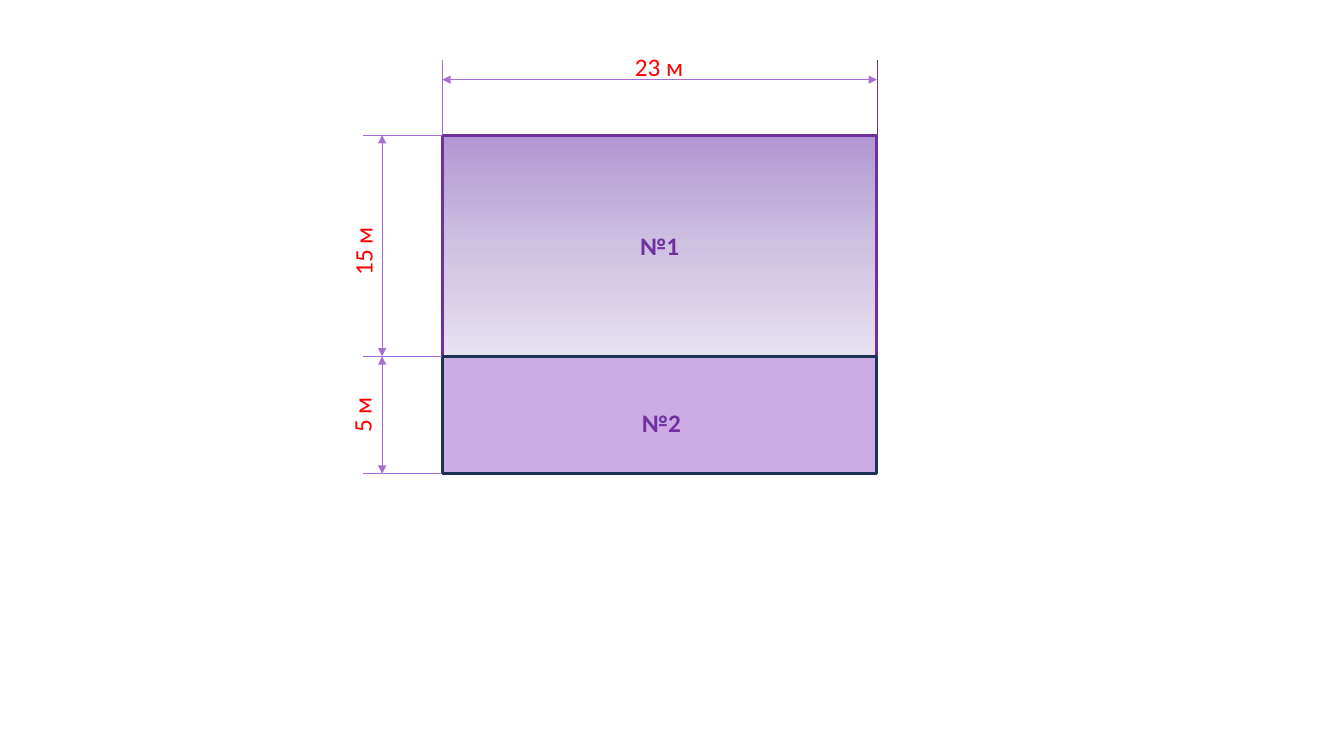
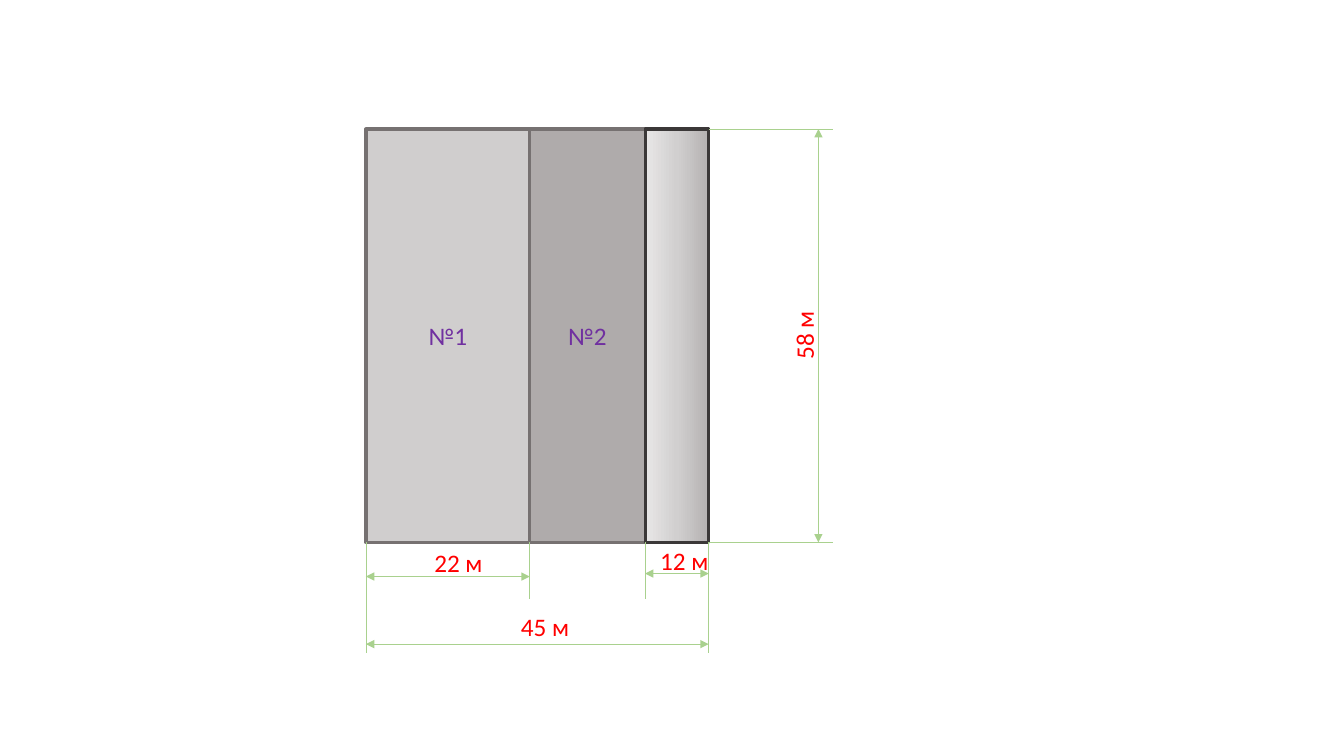
from copy import deepcopy

from lxml.etree import SubElement
from pptx import Presentation
from pptx.dml.color import RGBColor
from pptx.enum.shapes import MSO_CONNECTOR, MSO_SHAPE
from pptx.enum.text import MSO_ANCHOR, MSO_AUTO_SIZE, PP_ALIGN
from pptx.oxml.ns import qn
from pptx.util import Pt

INK = {
    "red": "FF0000",
    "plum": "7030A0",
    "lilac": "A86ED4",
    "navy": "1E3256",
    "green": "A9D18E",
    "pale": "D0CECE",
    "mid": "AFABAB",
    "edge": "767171",
    "dark": "3B3838",
    "violet1": "B197D2",
    "violet2": "CEC1E2",
    "violet3": "E7E1F0",
    "grey1": "B5B2B2",
    "grey2": "D1CFCF",
    "grey3": "E8E7E7",
}
FONT = {"name": "Calibri", "size": Pt(18)}
FRAME = {"auto_size": MSO_AUTO_SIZE.SHAPE_TO_FIT_TEXT}
THIN, THICK = 0.5, 2.25


def apply(obj, look):
    for key, val in look.items():
        setattr(obj, key, val)


def tint(name):
    return RGBColor.from_string(INK[name])


class Plan:
    def __init__(self):
        self.deck = Presentation()
        apply(self.deck, {"slide_width": Pt(960), "slide_height": Pt(540)})

    def page(self, ink):
        self.slide = self.deck.slides.add_slide(self.deck.slide_layouts[6])
        self.ink = ink

    def label(self, frame, text, ink, bold=False):
        run = frame.paragraphs[0].add_run()
        run.text = text
        apply(run.font, {**FONT, "bold": bold})
        run.font.color.rgb = tint(ink)

    def plot(self, left, top, right, base, edge, text="", bold=False):
        rect = self.slide.shapes.add_shape(
            MSO_SHAPE.RECTANGLE, Pt(left), Pt(top), Pt(right - left), Pt(base - top))
        rect.shadow.inherit = False
        rect.line.color.rgb = tint(edge)
        rect.line.width = Pt(THICK)
        if text:
            rect.text_frame.vertical_anchor = MSO_ANCHOR.MIDDLE
            rect.text_frame.paragraphs[0].alignment = PP_ALIGN.CENTER
            self.label(rect.text_frame, text, "plum", bold)
        return rect

    def paint(self, rect, ink, alpha=None):
        rect.fill.solid()
        rect.fill.fore_color.rgb = tint(ink)
        if alpha:
            hue = rect._element.spPr.find(qn("a:solidFill"))[0]
            SubElement(hue, qn("a:alpha"), val=str(alpha * 1000))

    def blend(self, rect, inks, angle):
        rect.fill.gradient()
        rect.fill.gradient_angle = angle
        stops = rect._element.spPr.find(qn("a:gradFill")).find(qn("a:gsLst"))
        stops.append(deepcopy(stops[0]))
        for at, (stop, ink) in enumerate(zip(rect.fill.gradient_stops, inks)):
            stop.color.rgb = tint(ink)
            stop.position = at / 2

    def line(self, x1, y1, x2, y2, ink=None, ends=()):
        link = self.slide.shapes.add_connector(
            MSO_CONNECTOR.STRAIGHT, Pt(x1), Pt(y1), Pt(x2), Pt(y2))
        link.line.color.rgb = tint(ink or self.ink)
        link.line.width = Pt(THIN)
        props = link._element.spPr
        for end in ends:
            SubElement(props.find(qn("a:ln")), qn(end), type="triangle")
        SubElement(props, qn("a:effectLst"))

    def span(self, *ends):
        self.line(*ends, ends=("a:headEnd", "a:tailEnd"))

    def note(self, text, left, top, width=49.7, turn=0, wrap=False, ink="red", bold=False):
        box = self.slide.shapes.add_textbox(Pt(left), Pt(top), Pt(width), Pt(29))
        box.rotation = turn
        apply(box.text_frame, {**FRAME, "word_wrap": wrap})
        self.label(box.text_frame, text, ink, bold)


def rows(plan):
    plan.page("lilac")
    left, right = 316, 626.4
    top, split, base = 96.5, 254.6, 338.4
    upper = plan.plot(left, top, right, split, "plum", "№1", True)
    plan.blend(upper, ("violet1", "violet2", "violet3"), 270)
    lower = plan.plot(left, split, right, base, "navy")
    plan.paint(lower, "lilac", 57)
    for x, ink in ((left, "lilac"), (right, "plum")):
        plan.line(x, 43.2, x, top, ink)
    for y in (top, split, base):
        plan.line(259.2, y, left, y)
    plan.span(left, 56.9, right, 56.9)
    for y1, y2 in ((top, split), (split, base)):
        plan.span(273, y1, 273, y2)
    plan.note("23 м", 446.4, 33.1)
    plan.note("15 м", 231.1, 161.3, 56.2, 270, True)
    plan.note("5 м", 238.3, 281.5, 40.3, 270)
    plan.note("№2", 451.4, 287.3, 56.9, wrap=True, ink="plum", bold=True)


def strips(plan):
    plan.page("green")
    top, base = 92.2, 387.4
    left, first, second, right = 261.4, 378.4, 460.8, 506.2
    for x1, x2, ink, text in ((left, first, "pale", "№1"), (first, second, "mid", "№2")):
        plan.paint(plan.plot(x1, top, x2, base, "edge", text), ink)
    last = plan.plot(second, top, right, base, "dark")
    plan.blend(last, ("grey1", "grey2", "grey3"), 180)
    for x, y in ((left, 466.6), (right, 466.6), (first, 427.7), (second, 427.7)):
        plan.line(x, base, x, y)
    for x1, x2, y in ((second, right, 409.7), (left, first, 411.8), (left, right, 460.1)):
        plan.span(x1, y, x2, y)
    for y in (base, top):
        plan.line(right, y, 594.7, y)
    plan.span(584.6, base, 584.6, top)
    plan.note("22 м", 303.1, 387.4)
    plan.note("12 м", 464.4, 385.9)
    plan.note("45 м", 365, 433.4)
    plan.note("58 м", 549.4, 224.6, turn=270)


def main():
    plan = Plan()
    rows(plan)
    strips(plan)
    plan.deck.save("out.pptx")


if __name__ == "__main__":
    main()
